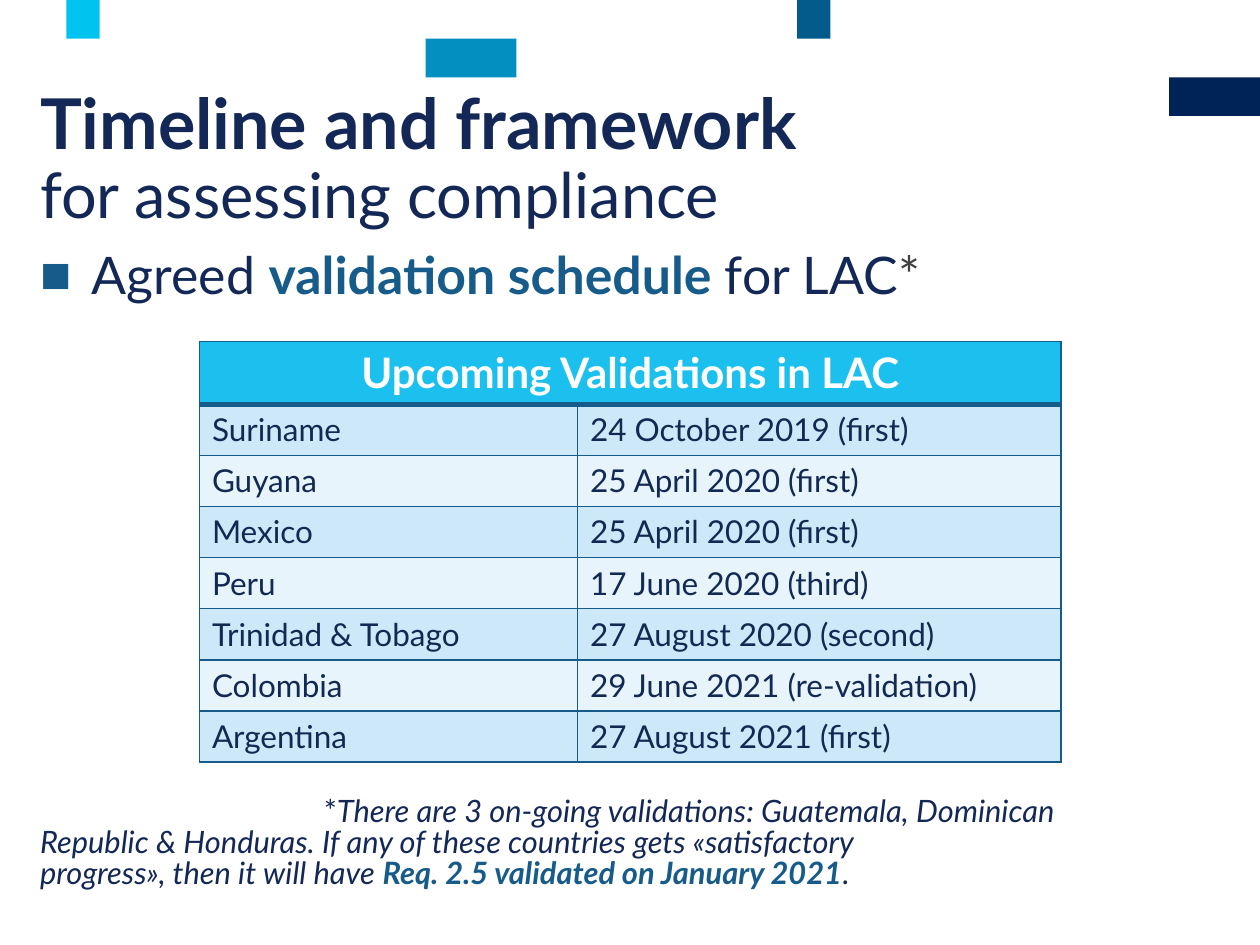
from lxml import etree
from pptx import Presentation
from pptx import util as u
from pptx.dml.color import RGBColor
from pptx.enum import shapes, text
from pptx.oxml import ns

NAVY = RGBColor(0x13, 0x28, 0x56)
CELL_NAVY = RGBColor(0x12, 0x29, 0x54)
BLUE = RGBColor(0x16, 0x5B, 0x89)
GREY = RGBColor(0x40, 0x40, 0x40)
WHITE = RGBColor(0xFF, 0xFF, 0xFF)
HEADER_CYAN = RGBColor(0x1C, 0xC0, 0xEE)
BANDS = (RGBColor(0xCD, 0xE8, 0xF8), RGBColor(0xE8, 0xF4, 0xFC))

BLOCK_HEIGHT = 0.78
BLOCKS = [
    (23.57, 2, 1.83, RGBColor(0x00, 0x23, 0x57)),
    (16.07, 0, 0.67, RGBColor(0x02, 0x5B, 0x8B)),
    (8.58, 1, 1.83, RGBColor(0x03, 0x8F, 0xBF)),
    (1.34, 0, 0.67, RGBColor(0x00, 0xC3, 0xF0)),
]
VALIDATIONS = [
    ("Suriname", "24 October 2019 (first)"),
    ("Guyana", "25 April 2020 (first)"),
    ("Mexico", "25 April 2020 (first)"),
    ("Peru", "17 June 2020 (third)"),
    ("Trinidad & Tobago", "27 August 2020 (second)"),
    ("Colombia", "29 June 2021 (re-validation)"),
    ("Argentina", "27 August 2021 (first)"),
]


class Deck:
    font_name = "Lato"

    def __init__(self, width, height):
        self.presentation = Presentation()
        self.presentation.slide_width = u.Cm(width)
        self.presentation.slide_height = u.Cm(height)
        blank = self.presentation.slide_layouts[6]
        self.slide = self.presentation.slides.add_slide(blank)

    def style(self, font, size, color, bold=False):
        font.name = self.font_name
        font.size = u.Pt(size)
        font.color.rgb = color
        font.bold = bold

    def block(self, left, top, width, height, color):
        block = self.slide.shapes.add_shape(
            shapes.MSO_SHAPE.RECTANGLE, *map(u.Cm, (left, top, width, height)))
        block.shadow.inherit = False
        block.fill.solid()
        block.fill.fore_color.rgb = color
        block.line.fill.background()

    def passage(self, box, runs, size, spacing, margin=0, indent=0, bullet=None):
        frame = self.slide.shapes.add_textbox(*map(u.Cm, box)).text_frame
        frame.word_wrap = True
        paragraph = frame.paragraphs[0]
        paragraph.line_spacing = spacing
        properties = paragraph._p.get_or_add_pPr()
        properties.set("marL", str(u.Cm(margin)))
        properties.set("indent", str(u.Cm(indent)))
        if bullet:
            color = etree.SubElement(properties, ns.qn("a:buClr"))
            etree.SubElement(color, ns.qn("a:srgbClr"), val=str(BLUE))
            etree.SubElement(properties, ns.qn("a:buFont"), typeface="Arial")
            etree.SubElement(properties, ns.qn("a:buChar"), char=bullet)
        self.style(paragraph.font, size, NAVY)
        for words, changes in runs:
            for index, line in enumerate(words.split("\n")):
                if index:
                    paragraph.add_line_break()
                run = paragraph.add_run()
                run.text = line
                self.style(run.font, changes.get("size", size),
                           changes.get("color", NAVY), changes.get("bold", False))
                run.font.italic = changes.get("italic", False)

    def cell(self, cell, words, fill, size, color, bold=False, centred=False):
        cell.fill.solid()
        cell.fill.fore_color.rgb = fill
        paragraph = cell.text_frame.paragraphs[0]
        paragraph.text = words
        self.style(paragraph.font, size, color, bold)
        if centred:
            paragraph.alignment = text.PP_ALIGN.CENTER

    def borders(self, cell, top=1, bottom=1):
        properties = cell._tc.get_or_add_tcPr()
        widths = {"lnL": 1, "lnR": 1, "lnT": top, "lnB": bottom}
        for index, (side, width) in enumerate(widths.items()):
            line = etree.Element(ns.qn(f"a:{side}"), w=str(u.Pt(width)))
            fill = etree.SubElement(line, ns.qn("a:solidFill"))
            etree.SubElement(fill, ns.qn("a:srgbClr"), val=str(BLUE))
            properties.insert(index, line)

    def schedule(self, left, top, widths, header_height, row_height, heading, rows):
        height = header_height + row_height * len(rows)
        table = self.slide.shapes.add_table(
            len(rows) + 1, len(widths),
            *map(u.Cm, (left, top, sum(widths), height))).table
        for column, width in zip(table.columns, widths):
            column.width = u.Cm(width)
        for index, row in enumerate(table.rows):
            row.height = u.Cm(row_height if index else header_height)
            for cell in row.cells:
                self.borders(cell, top=3 if index == 1 else 1,
                             bottom=1 if index else 3)
        table.cell(0, 0).merge(table.cell(0, len(widths) - 1))
        self.cell(table.cell(0, 0), heading, HEADER_CYAN, 24, WHITE, True, True)
        for index, entry in enumerate(rows):
            for column, words in enumerate(entry):
                self.cell(table.cell(index + 1, column), words,
                          BANDS[index % 2], 18, CELL_NAVY)


def main():
    deck = Deck(25.4, 19.05)
    for left, step, width, color in BLOCKS:
        deck.block(left, step * BLOCK_HEIGHT, width, BLOCK_HEIGHT, color)

    deck.passage((0.56, 1.68, 22.73, 3.1), [
        ("Timeline and framework\n", {"bold": True}),
        ("for assessing compliance", {"size": 36}),
    ], size=40, spacing=0.89)

    deck.passage((0.56, 4.98, 23.5, 1.4), [
        ("Agreed ", {}),
        ("validation schedule ", {"color": BLUE, "bold": True}),
        ("for LAC", {}),
        ("*", {"color": GREY}),
    ], size=29.6, spacing=0.84, margin=1.04, indent=-1.04, bullet="■")

    deck.schedule(4.02, 6.88, (7.62, 9.75), 1.27, 1.03,
                  "Upcoming Validations in LAC", VALIDATIONS)

    deck.passage((0.56, 15.95, 23.5, 2.2), [
        ("*", {}),
        ("There are 3 on-going validations: Guatemala, Dominican\n"
         "Republic & Honduras. If any of these countries gets «satisfactory\n"
         "progress», then it will have ", {"italic": True}),
        ("Req. 2.5 validated on January 2021",
         {"color": BLUE, "bold": True, "italic": True}),
        (".", {"italic": True}),
    ], size=17.6, spacing=0.84, indent=5.72)

    deck.presentation.save("out.pptx")


if __name__ == "__main__":
    main()
